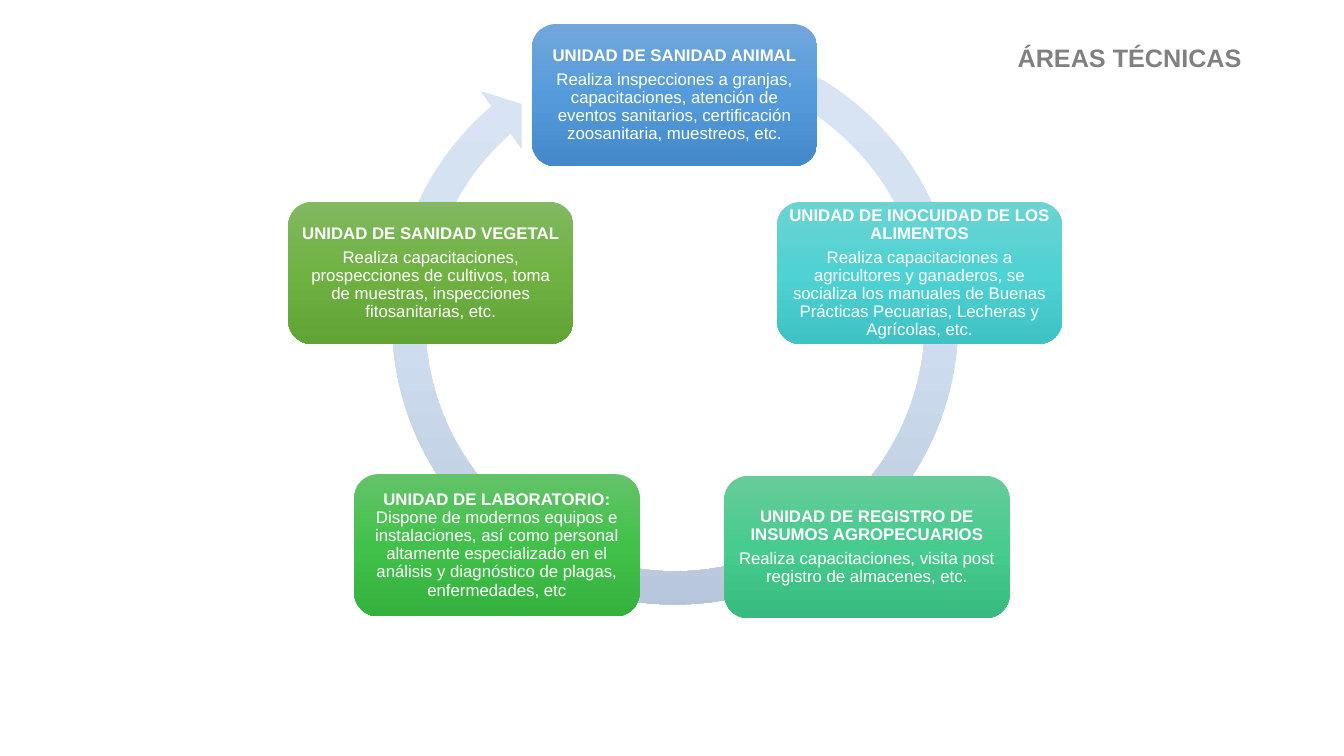
import copy

import pptx
import pptx.dml.color
import pptx.enum.shapes
import pptx.enum.text
import pptx.oxml.ns
import pptx.util

Pt = pptx.util.Pt
RGB = pptx.dml.color.RGBColor
SHAPE = pptx.enum.shapes.MSO_SHAPE
ALIGN = pptx.enum.text.PP_ALIGN
ANCHOR = pptx.enum.text.MSO_ANCHOR

FONT = "Arial"
WHITE = RGB(0xFF, 0xFF, 0xFF)
TITLE_GREY = RGB(0x80, 0x80, 0x80)
RING_BLUES = (RGB(0xDB, 0xE5, 0xF3), RGB(0xD0, 0xDE, 0xF1), RGB(0xB6, 0xC5, 0xD9))
BLUES = (RGB(0x71, 0xA6, 0xDB), RGB(0x55, 0x9B, 0xDB), RGB(0x44, 0x8A, 0xCA))
TEALS = (RGB(0x6C, 0xD3, 0xD3), RGB(0x4E, 0xD2, 0xD3), RGB(0x3E, 0xC2, 0xC3))
MINTS = (RGB(0x67, 0xCC, 0x9A), RGB(0x47, 0xCB, 0x8E), RGB(0x39, 0xBB, 0x7F))
GREENS = (RGB(0x63, 0xC3, 0x68), RGB(0x42, 0xC1, 0x4A), RGB(0x34, 0xB2, 0x3D))
OLIVES = (RGB(0x81, 0xB8, 0x61), RGB(0x6F, 0xB2, 0x42), RGB(0x62, 0xA3, 0x36))

RING_ADJUSTMENTS = (0.055, 3.307, 137.524, 174.003, 0.058)
CARD_WIDTH, CARD_HEIGHT = 203.76, 101.52

# Left, top, gradient, then the paragraphs: each a list of (text, bold) runs.
UNITS = [
    (380, 17.2, BLUES, [
        [("UNIDAD DE SANIDAD ANIMAL", True)],
        [("Realiza inspecciones a granjas, capacitaciones, atención de eventos "
          "sanitarios, certificación zoosanitaria, muestreos, etc.", False)]]),
    (555, 144.2, TEALS, [
        [("UNIDAD DE INOCUIDAD DE LOS ALIMENTOS", True)],
        [("Realiza capacitaciones a agricultores y ganaderos, se socializa los manuales "
          "de Buenas Prácticas Pecuarias, Lecheras y Agrícolas, etc.", False)]]),
    (517.4, 339.9, MINTS, [
        [("UNIDAD DE REGISTRO DE INSUMOS AGROPECUARIOS", True)],
        [("Realiza capacitaciones, visita post registro de almacenes, etc.", False)]]),
    (253.1, 338.7, GREENS, [
        [("UNIDAD DE LABORATORIO: ", True),
         ("Dispone de modernos equipos e instalaciones, así como personal altamente "
          "especializado en el análisis y diagnóstico de plagas, enfermedades, etc", False)]]),
    (205.9, 144.2, OLIVES, [
        [("UNIDAD DE SANIDAD VEGETAL", True)],
        [("Realiza capacitaciones, prospecciones de cultivos, toma de muestras, "
          "inspecciones fitosanitarias, etc.", False)]]),
]


def add_gradient_shape(slide, kind, left, top, width, height, colours):
    """Add a borderless shape shaded from top to bottom through three colours."""
    shape = slide.shapes.add_shape(kind, Pt(left), Pt(top), Pt(width), Pt(height))
    shape.shadow.inherit = False
    shape.line.fill.background()
    shape.fill.gradient()
    shape.fill.gradient_angle = 270
    stop_list = shape._element.spPr.find(".//" + pptx.oxml.ns.qn("a:gsLst"))
    stop_list.append(copy.deepcopy(stop_list[-1]))
    for stop, position, colour in zip(shape.fill.gradient_stops, (0, 0.5, 1), colours):
        stop.position = position
        stop.color.rgb = colour
    return shape


def add_ring(slide, left, top, size):
    ring = add_gradient_shape(slide, SHAPE.CIRCULAR_ARROW, left, top, size, size, RING_BLUES)
    for index, value in enumerate(RING_ADJUSTMENTS):
        ring.adjustments[index] = value


def add_unit_card(slide, left, top, colours, paragraphs):
    card = add_gradient_shape(slide, SHAPE.ROUNDED_RECTANGLE, left, top,
                              CARD_WIDTH, CARD_HEIGHT, colours)
    frame = card.text_frame
    frame.word_wrap = True
    frame.vertical_anchor = ANCHOR.MIDDLE
    frame.margin_left = frame.margin_right = Pt(3.6)
    frame.margin_top = frame.margin_bottom = Pt(3.6)
    for index, runs in enumerate(paragraphs):
        paragraph = frame.add_paragraph() if index else frame.paragraphs[0]
        paragraph.alignment = ALIGN.CENTER
        paragraph.line_spacing = 0.9
        paragraph.space_after = Pt(4.2)
        paragraph.font.name = FONT
        paragraph.font.size = Pt(12)
        paragraph.font.color.rgb = WHITE
        for text, bold in runs:
            run = paragraph.add_run()
            run.text = text
            run.font.bold = bold


def add_title(slide, left, top, width, height):
    box = slide.shapes.add_textbox(Pt(left), Pt(top), Pt(width), Pt(height))
    frame = box.text_frame
    frame.word_wrap = True
    frame.vertical_anchor = ANCHOR.TOP
    title = frame.paragraphs[0]
    title.text = "ÁREAS TÉCNICAS"
    title.alignment = ALIGN.RIGHT
    title.line_spacing = 0.9
    title.font.name = FONT
    title.font.size = Pt(18)
    title.font.bold = True
    title.font.color.rgb = TITLE_GREY


def main():
    presentation = pptx.Presentation()
    presentation.slide_width = Pt(960)
    presentation.slide_height = Pt(540)
    slide = presentation.slides.add_slide(presentation.slide_layouts[6])
    add_ring(slide, 267, 14.4, 430.5)
    for left, top, colours, paragraphs in UNITS:
        add_unit_card(slide, left, top, colours, paragraphs)
    add_title(slide, 66, 28.8, 828, 44.6)
    presentation.save("out.pptx")


if __name__ == "__main__":
    main()
